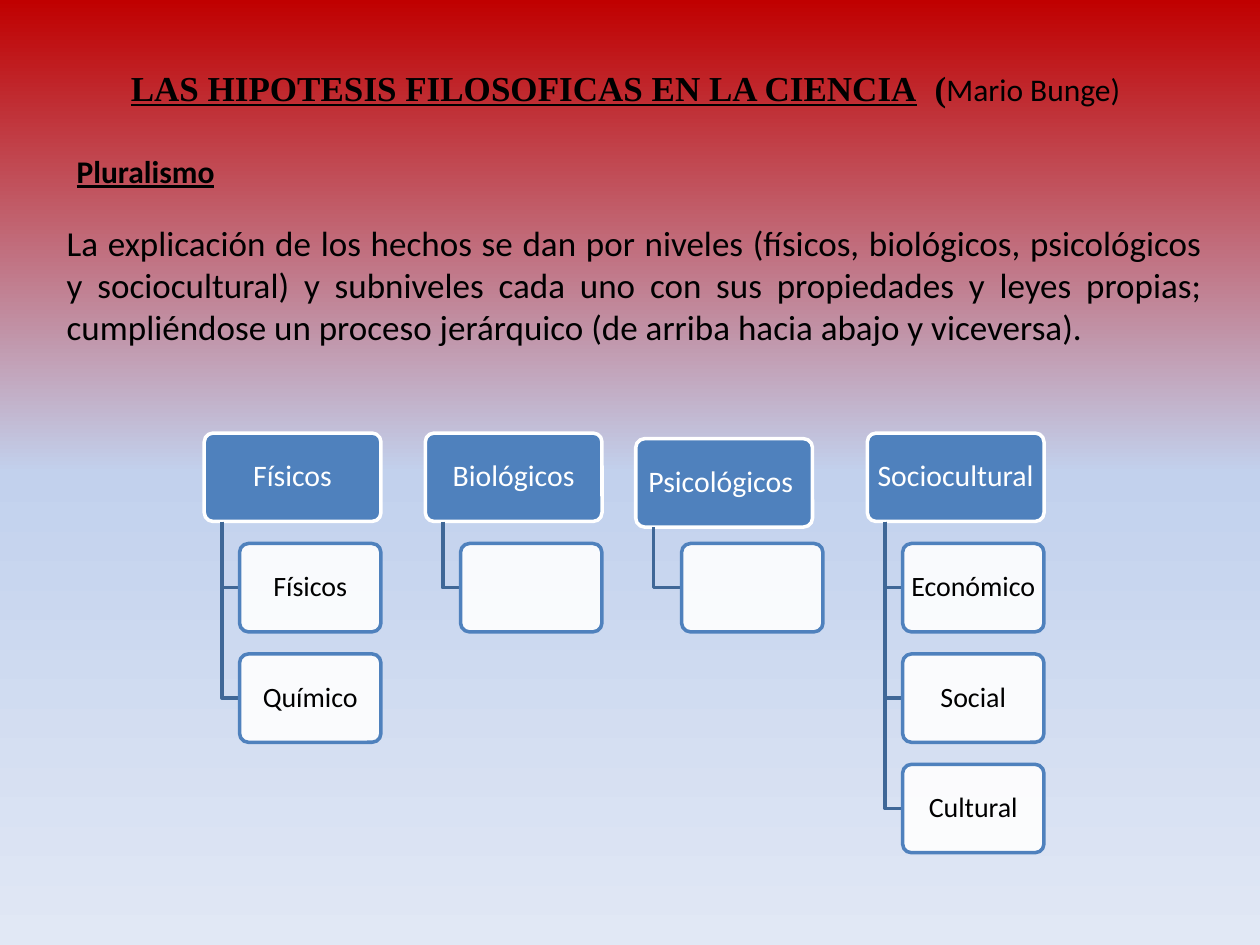
import copy
from dataclasses import dataclass

import pptx
import pptx.dml.color
import pptx.enum.shapes
import pptx.enum.text
import pptx.oxml
import pptx.oxml.ns
import pptx.util

Pt = pptx.util.Pt
RGB = pptx.dml.color.RGBColor.from_string
ALIGN = pptx.enum.text.PP_ALIGN


@dataclass(frozen=True)
class Theme:
    background: tuple = ((0, "C00000"), (0.5, "C2D1ED"), (1, "E1E8F5"))
    accent: str = "4F81BD"
    branch: str = "3F6797"
    light: str = "FFFFFF"
    dark: str = "000000"
    body_font: str = "Calibri"
    title_font: str = "Times New Roman"
    large: int = 20
    medium: int = 18
    level: int = 17
    sublevel: int = 16
    line: int = 2
    opacity: int = 90


THEME = Theme()


@dataclass(frozen=True)
class Run:
    text: str
    size: float
    font: str = THEME.body_font
    color: str = THEME.dark
    bold: bool = False
    underline: bool = False


@dataclass(frozen=True)
class Box:
    left: float
    top: float
    width: float
    height: float

    def points(self) -> tuple:
        return Pt(self.left), Pt(self.top), Pt(self.width), Pt(self.height)


@dataclass(frozen=True)
class Level:
    name: str
    sublevels: tuple
    shift_x: float = 0
    shift_y: float = 0


# Hierarchy grid, in points
FIRST_LEFT, FIRST_TOP = 116.7, 247.5
COLUMN_STEP, ROW_STEP = 126.3, 63.1
LEVEL_WIDTH, SUBLEVEL_WIDTH, BOX_HEIGHT = 101, 80.8, 50.5
STEM_INSET = 10.1

LEVELS = (
    Level("Físicos", ("Físicos", "Químico")),
    Level("Biológicos", ("",)),
    Level("Psicológicos ", ("",), -6, 3.2),
    Level("Sociocultural", ("Económico", "Social", "Cultural")),
)


def paint_background(slide) -> None:
    fill = slide.background.fill
    fill.gradient()
    fill.gradient_angle = 270
    stop_list = slide.element.find(".//" + pptx.oxml.ns.qn("a:gsLst"))
    stop_list.insert(1, copy.deepcopy(stop_list[0]))
    for stop, (position, color) in zip(fill.gradient_stops, THEME.background):
        stop.position = position
        stop.color.rgb = RGB(color)


def write(paragraph, runs: tuple, align) -> None:
    paragraph.alignment = align
    for item in runs:
        run = paragraph.add_run()
        run.text = item.text
        font = run.font
        font.name, font.size = item.font, Pt(item.size)
        font.bold, font.underline = item.bold, item.underline
        font.color.rgb = RGB(item.color)


def add_text(slide, box: Box, runs: tuple, wrap: bool = True) -> None:
    frame = slide.shapes.add_textbox(*box.points()).text_frame
    frame.word_wrap = wrap
    frame.auto_size = pptx.enum.text.MSO_AUTO_SIZE.SHAPE_TO_FIT_TEXT
    frame.vertical_anchor = pptx.enum.text.MSO_ANCHOR.MIDDLE
    write(frame.paragraphs[0], runs, ALIGN.JUSTIFY)


def add_card(slide, box: Box, label: Run, fill: str, line: str,
             inset: float, opacity: int = 100) -> None:
    card = slide.shapes.add_shape(
        pptx.enum.shapes.MSO_SHAPE.ROUNDED_RECTANGLE, *box.points())
    card.adjustments[0] = 0.1
    card.shadow.inherit = False
    card.fill.solid()
    card.fill.fore_color.rgb = RGB(fill)
    if opacity < 100:
        color = card.element.spPr.find(".//" + pptx.oxml.ns.qn("a:srgbClr"))
        alpha = pptx.oxml.parse_xml(
            f'<a:alpha {pptx.oxml.ns.nsdecls("a")} val="{opacity * 1000}"/>')
        color.append(alpha)
    card.line.color.rgb = RGB(line)
    card.line.width = Pt(THEME.line)
    if label.text:
        frame = card.text_frame
        frame.word_wrap = True
        frame.vertical_anchor = pptx.enum.text.MSO_ANCHOR.MIDDLE
        frame.margin_left = frame.margin_right = Pt(inset)
        frame.margin_top = frame.margin_bottom = Pt(1.5)
        frame.paragraphs[0].line_spacing = 0.9
        write(frame.paragraphs[0], (label,), ALIGN.CENTER)


def add_branch(slide, parent: Box, child: Box) -> None:
    stem = Pt(parent.left + STEM_INSET)
    middle = Pt(child.top + child.height / 2)
    builder = slide.shapes.build_freeform(
        stem, Pt(parent.top + parent.height))
    builder.add_line_segments(
        [(stem, middle), (Pt(child.left), middle)], close=False)
    branch = builder.convert_to_shape()
    branch.shadow.inherit = False
    branch.fill.background()
    branch.line.color.rgb = RGB(THEME.branch)
    branch.line.width = Pt(THEME.line)


def add_level(slide, column: int, level: Level) -> None:
    left = FIRST_LEFT + column * COLUMN_STEP
    parent = Box(left + level.shift_x, FIRST_TOP + level.shift_y,
                 LEVEL_WIDTH, BOX_HEIGHT)
    add_card(slide, parent, Run(level.name, THEME.level, color=THEME.light),
             THEME.accent, THEME.light, 2.6)
    for row, name in enumerate(level.sublevels, start=1):
        child = Box(left + LEVEL_WIDTH - SUBLEVEL_WIDTH,
                    FIRST_TOP + row * ROW_STEP, SUBLEVEL_WIDTH, BOX_HEIGHT)
        add_branch(slide, parent, child)
        add_card(slide, child, Run(name, THEME.sublevel),
                 THEME.light, THEME.accent, 2.4, THEME.opacity)


def main() -> None:
    deck = pptx.Presentation()
    deck.slide_width, deck.slide_height = Pt(720), Pt(540)
    slide = deck.slides.add_slide(deck.slide_layouts[6])
    paint_background(slide)

    # Title, subtitle and explanation
    add_text(slide, Box(67.7, 34, 584, 31.5), (
        Run("LAS HIPOTESIS FILOSOFICAS EN LA CIENCIA", THEME.large,
            THEME.title_font, bold=True, underline=True),
        Run("  (", THEME.large, THEME.title_font, bold=True),
        Run("Mario Bunge)", THEME.medium),
    ), wrap=False)
    add_text(slide, Box(36.7, 83, 124.5, 29), (
        Run("Pluralismo", THEME.medium, bold=True, underline=True),))
    add_text(slide, Box(31, 122.4, 663, 80), (
        Run("La explicación de los hechos se dan por niveles (físicos, "
            "biológicos, psicológicos y sociocultural) y subniveles cada uno "
            "con sus propiedades y leyes propias; cumpliéndose un proceso "
            "jerárquico (de arriba hacia abajo y viceversa).", THEME.large),))

    # Hierarchy of levels
    for column, level in enumerate(LEVELS):
        add_level(slide, column, level)

    deck.save("out.pptx")


if __name__ == "__main__":
    main()
